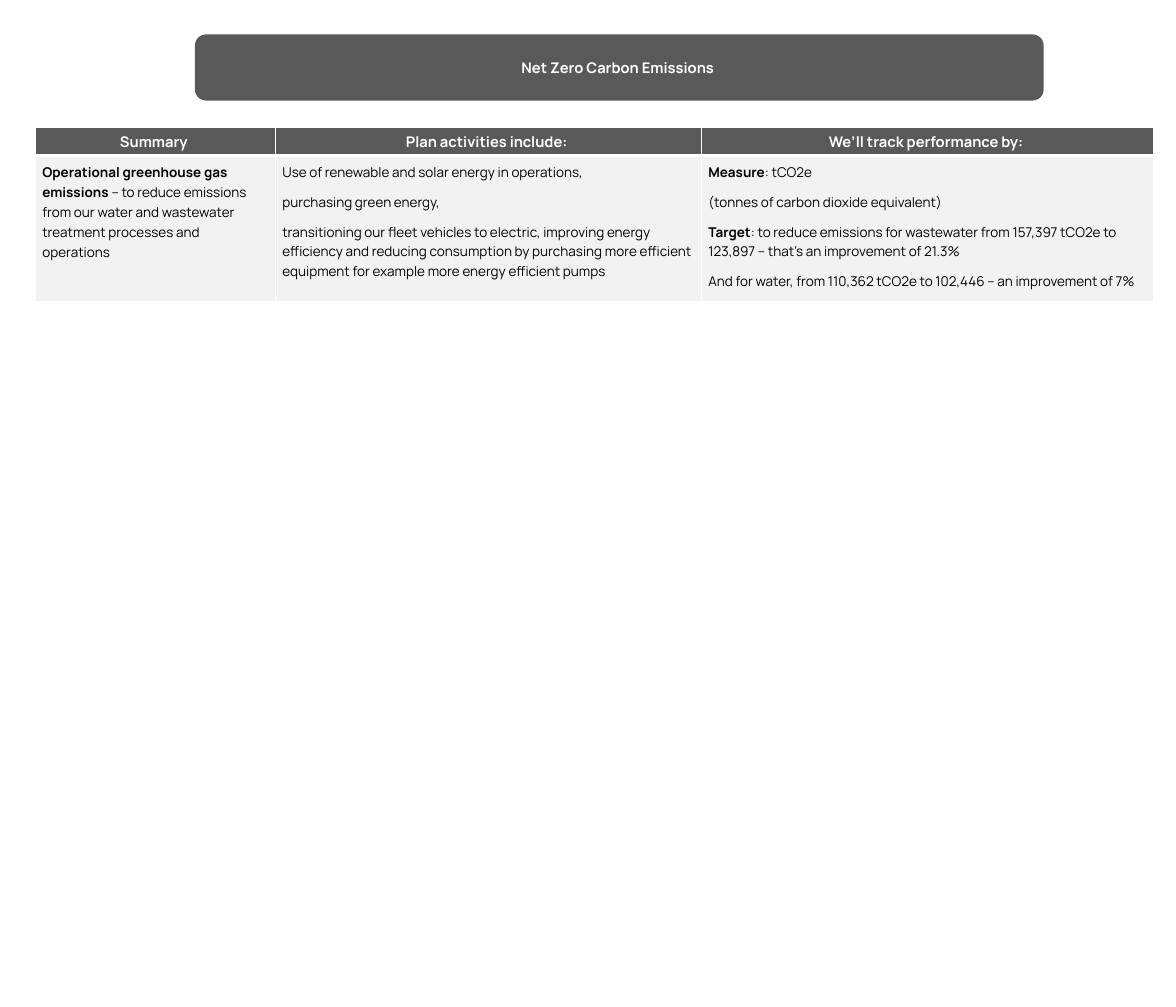
import pptx
import pptx.dml.color
import pptx.enum.shapes
import pptx.enum.text
import pptx.oxml
import pptx.oxml.ns
import pptx.util

SLIDE_WIDTH, SLIDE_HEIGHT = 13.33, 11.42
COLORS = {"dark": "595959", "light": "F2F2F2", "white": "FFFFFF", "black": "000000"}
FONT = "Manrope"
COLUMN_WIDTHS = (2.72, 4.83, 5.13)
ROW_HEIGHTS = (0.31, 1.66)
THIN, THICK = 1, 3

HEADERS = ("Summary ", "Plan activities include: ", "We’ll track performance by: ")
# Each cell lists its paragraphs as (bold lead, plain remainder).
DETAILS = (
    [("Operational greenhouse gas emissions ",
      "– to reduce emissions from our water and wastewater treatment processes and operations ")],
    [("", "Use of renewable and solar energy in operations, "),
     ("", "purchasing green energy, "),
     ("", "transitioning our fleet vehicles to electric, improving energy efficiency and "
          "reducing consumption by purchasing more efficient equipment for example more "
          "energy efficient pumps ")],
    [("Measure", ": tCO2e "),
     ("", "(tonnes of carbon dioxide equivalent) "),
     ("Target", ": to reduce emissions for wastewater from 157,397 tCO2e to 123,897 – "
                "that’s an improvement of 21.3% "),
     ("", "And for water, from 110,362 tCO2e to 102,446 – an improvement of 7% ")],
)


def rgb(name):
    return pptx.dml.color.RGBColor.from_string(COLORS[name])


def paint(target, color):
    target.fill.solid()
    target.fill.fore_color.rgb = rgb(color)


def write_paragraph(paragraph, lead, remainder, size, color):
    """Write a bold lead followed by plain text, either of which may be empty."""
    for text, bold in ((lead, True), (remainder, False)):
        if text:
            run = paragraph.add_run()
            run.text = text
            run.font.bold = bold
            run.font.name = FONT
            run.font.size = pptx.util.Pt(size)
            run.font.color.rgb = rgb(color)


def set_borders(cell, top, bottom):
    """Give the cell white borders; top and bottom are widths in points."""
    properties = cell._tc.get_or_add_tcPr()
    widths = {"lnL": THIN, "lnR": THIN, "lnT": top, "lnB": bottom}
    for position, (side, width) in enumerate(widths.items()):
        properties.insert(position, pptx.oxml.parse_xml(
            f'<a:{side} {pptx.oxml.ns.nsdecls("a")} w="{pptx.util.Pt(width)}">'
            f'<a:solidFill><a:srgbClr val="{COLORS["white"]}"/></a:solidFill></a:{side}>'))


def fill_cell(cell, paragraphs, size, color, margin, alignment):
    cell.margin_left = cell.margin_right = pptx.util.Inches(margin)
    cell.margin_top = cell.margin_bottom = pptx.util.Inches(margin)
    for index, (lead, remainder) in enumerate(paragraphs):
        frame = cell.text_frame
        paragraph = frame.add_paragraph() if index else frame.paragraphs[0]
        paragraph.alignment = alignment
        paragraph.line_spacing = 1.07
        paragraph.space_after = pptx.util.Pt(8)
        write_paragraph(paragraph, lead, remainder, size, color)


def add_title(slide, left, top, width, height):
    banner = slide.shapes.add_shape(
        pptx.enum.shapes.MSO_SHAPE.ROUNDED_RECTANGLE,
        *map(pptx.util.Inches, (left, top, width, height)))
    banner.shadow.inherit = False
    paint(banner, "dark")
    banner.line.fill.background()
    banner.text_frame.word_wrap = True
    banner.text_frame.vertical_anchor = pptx.enum.text.MSO_ANCHOR.MIDDLE
    paragraph = banner.text_frame.paragraphs[0]
    paragraph.alignment = pptx.enum.text.PP_ALIGN.CENTER
    write_paragraph(paragraph, "Net Zero Carbon Emissions ", "", 12, "white")


def add_plan_table(slide, left, top):
    table = slide.shapes.add_table(
        len(ROW_HEIGHTS), len(COLUMN_WIDTHS),
        *map(pptx.util.Inches, (left, top, sum(COLUMN_WIDTHS), sum(ROW_HEIGHTS)))).table
    for row, height in zip(table.rows, ROW_HEIGHTS):
        row.height = pptx.util.Inches(height)
    for index, width in enumerate(COLUMN_WIDTHS):
        table.columns[index].width = pptx.util.Inches(width)
        header, detail = table.cell(0, index), table.cell(1, index)
        set_borders(header, THIN, THICK)
        set_borders(detail, THICK, THIN)
        paint(header, "dark")
        paint(detail, "light")
        header.vertical_anchor = pptx.enum.text.MSO_ANCHOR.MIDDLE
        fill_cell(header, [(HEADERS[index], "")], 12, "white", 0,
                  pptx.enum.text.PP_ALIGN.CENTER)
        fill_cell(detail, DETAILS[index], 11, "black", 0.08,
                  pptx.enum.text.PP_ALIGN.LEFT)


def main():
    presentation = pptx.Presentation()
    presentation.slide_width = pptx.util.Inches(SLIDE_WIDTH)
    presentation.slide_height = pptx.util.Inches(SLIDE_HEIGHT)
    slide = presentation.slides.add_slide(presentation.slide_layouts[6])
    add_plan_table(slide, 0.4, 1.45)
    add_title(slide, 2.21, 0.39, 9.62, 0.75)
    presentation.save("out.pptx")


if __name__ == "__main__":
    main()
